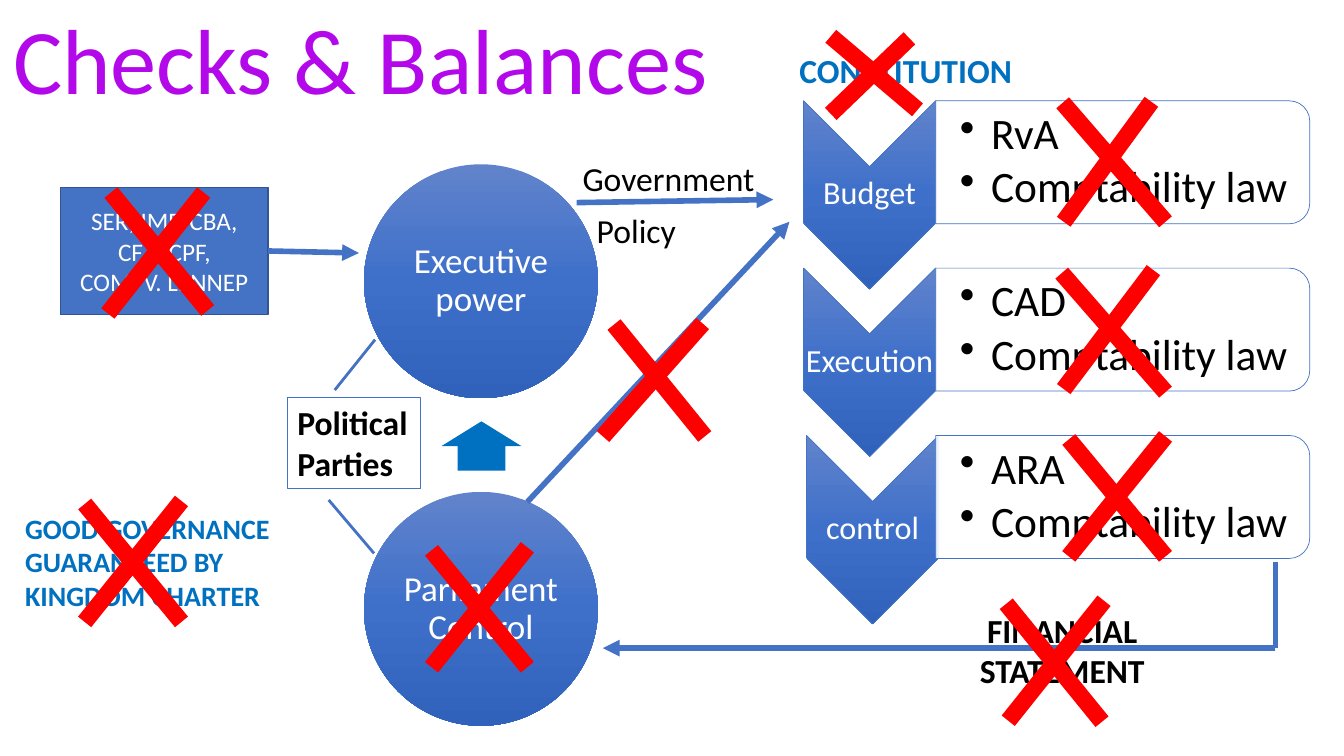
from copy import deepcopy

from pptx import Presentation
from pptx.dml.color import RGBColor
from pptx.enum.shapes import MSO_CONNECTOR, MSO_SHAPE
from pptx.enum.text import MSO_ANCHOR, PP_ALIGN
from pptx.oxml.ns import qn
from pptx.oxml.xmlchemy import OxmlElement
from pptx.util import Inches, Pt

STRAIGHT = MSO_CONNECTOR.STRAIGHT
OVAL, RECTANGLE, UP_ARROW = MSO_SHAPE.OVAL, MSO_SHAPE.RECTANGLE, MSO_SHAPE.UP_ARROW
CHEVRON, ROUND_PANEL = MSO_SHAPE.CHEVRON, MSO_SHAPE.ROUND_2_SAME_RECTANGLE
TOP, MIDDLE = MSO_ANCHOR.TOP, MSO_ANCHOR.MIDDLE
LEFT, CENTER = PP_ALIGN.LEFT, PP_ALIGN.CENTER

BLACK = RGBColor(0, 0, 0)
WHITE = RGBColor(255, 255, 255)
RED = RGBColor(255, 0, 0)
PURPLE = RGBColor(0xB3, 0x08, 0xEA)
BLUE = RGBColor(0x44, 0x72, 0xC4)
DARK_BLUE = RGBColor(0x32, 0x54, 0x91)
BRIGHT_BLUE = RGBColor(0x00, 0x70, 0xC0)
GRADIENT = [(0, RGBColor(0x61, 0x83, 0xCB)), (0.5, RGBColor(0x3E, 0x70, 0xCA)),
            (1, RGBColor(0x30, 0x62, 0xBB))]
FONT = "Calibri"

TITLE = "Checks & Balances"
STAGES = [("Budget", 7.97, ["RvA", "Comptability law"]),
          ("Execution", 7.97, ["CAD", "Comptability law"]),
          ("control", 8.0, ["ARA", "Comptability law"])]
STAGE_TOP, STAGE_STEP = 1.0, 1.66
POWERS = [("Parliament Control", 4.88), ("Executive power", 1.63)]
POWER_LEFT, POWER_SIZE, POWER_INSET = 3.61, 2.32, 0.34
ADVISERS = ["SER, IMF, CBA,", "CF, NCPF,", "COM. V. LENNEP"]
LABELS = [
    (["FINANCIAL STATEMENT"], (9.34, 6.0, 2.39, 0.91), 24, BLACK, True, CENTER),
    (["Government"], (5.68, 1.52, 2.0, 0.5), 24, BLACK, False, LEFT),
    (["Policy"], (5.82, 2.03, 2.0, 0.5), 24, BLACK, False, LEFT),
    (["CONSTITUTION"], (7.83, 0.45, 2.35, 0.5), 24, BRIGHT_BLUE, True, LEFT),
    (["GOOD GOVERNANCE", "GUARANTEED BY", "KINGDOM CHARTER"],
     (0.15, 5.02, 3.11, 1.11), 20, BRIGHT_BLUE, True, LEFT),
]
FLOWS = [
    ((5.23, 4.98, 7.83, 2.2), 4, True),
    ((12.65, 5.58, 12.65, 6.43), 4, False),
    ((12.65, 6.43, 5.98, 6.43), 4, True),
    ((5.72, 2.01, 7.67, 1.98), 4, True),
    ((3.72, 3.37, 3.32, 3.87), 2, False),
    ((3.26, 4.96, 3.71, 5.49), 2, False),
]
CROSSES = [
    ((8.24, 0.36, 9.1, 1.09), (9.02, 0.38, 8.24, 1.13)),
    ((10.54, 1.02, 11.56, 2.2), (10.55, 2.2, 11.42, 1.01)),
    ((10.53, 2.71, 11.56, 3.89), (10.55, 3.86, 11.44, 2.68)),
    ((10.6, 4.36, 11.56, 5.52), (10.6, 5.52, 11.56, 4.33)),
    ((1.1, 1.91, 2.06, 3.08), (1.07, 3.11, 2.02, 1.91)),
    ((4.28, 5.46, 5.23, 6.62), (4.28, 6.62, 5.23, 5.43)),
    ((0.84, 5.0, 1.8, 6.17), (0.84, 6.17, 1.8, 4.97)),
    ((10.0, 7.15, 10.95, 5.96), (9.98, 5.99, 10.93, 7.16)),
    ((5.98, 4.33, 6.97, 3.21), (6.09, 3.22, 6.99, 4.33)),
]

deck = Presentation()
deck.slide_width, deck.slide_height = Inches(13.33), Inches(7.5)
page = deck.slides.add_slide(deck.slide_layouts[5])


def write(shape, lines, size, color, bold=False, align=LEFT, anchor=TOP,
          spacing=None, margins=None, bullets=False):
    frame = shape.text_frame
    frame.word_wrap = True
    frame.vertical_anchor = anchor
    if margins:
        (frame.margin_left, frame.margin_top,
         frame.margin_right, frame.margin_bottom) = map(Inches, margins)
    for index, line in enumerate(lines):
        para = frame.add_paragraph() if index else frame.paragraphs[0]
        para.alignment = align
        if spacing:
            para.line_spacing = spacing
        if bullets:
            para.space_after = Pt(size * 0.15)
            properties = para._p.get_or_add_pPr()
            properties.set("marL", str(Inches(0.31)))
            properties.set("indent", str(-Inches(0.31)))
            mark = OxmlElement("a:buChar")
            mark.set("char", "•")
            properties.append(mark)
        span = para.add_run()
        span.text = line
        span.font.name, span.font.size = FONT, Pt(size)
        span.font.bold, span.font.color.rgb = bold, color


def add_text(area, *content, **style):
    box = page.shapes.add_textbox(*map(Inches, area))
    write(box, *content, **style)


def add_figure(kind, area, fill=None, line=None, width=0.5, turned=False):
    left, top, wide, high = area
    if turned:
        shift = (wide - high) / 2
        left, top, wide, high = left + shift, top - shift, high, wide
    shape = page.shapes.add_shape(kind, *map(Inches, (left, top, wide, high)))
    shape.shadow.inherit = False
    if turned:
        shape.rotation = 90
    if fill is GRADIENT:
        shape.fill.gradient()
        shape.fill.gradient_angle = 270
        gradient = shape._element.spPr.find(qn("a:gradFill"))
        gradient.set("rotWithShape", "0")
        stops = gradient.find(qn("a:gsLst"))
        stops.append(deepcopy(stops[0]))
        for stop, (position, color) in zip(shape.fill.gradient_stops, GRADIENT):
            stop.position, stop.color.rgb = position, color
    elif fill is not None:
        shape.fill.solid()
        shape.fill.fore_color.rgb = fill
    else:
        shape.fill.background()
    if line is not None:
        shape.line.color.rgb, shape.line.width = line, Pt(width)
    else:
        shape.line.fill.background()
    return shape


def add_line(ends, color, width, arrow=False):
    line = page.shapes.add_connector(STRAIGHT, *map(Inches, ends))
    line.line.color.rgb, line.line.width = color, Pt(width)
    if arrow:
        head = OxmlElement("a:tailEnd")
        head.set("type", "triangle")
        line.line._get_or_add_ln().append(head)
    line._element.spPr.append(OxmlElement("a:effectLst"))
    return line


title = page.shapes.title
title.left, title.top, title.width, title.height = map(Inches, (0.03, 0.09, 7.2, 1.1))
write(title, [TITLE], 66, PURPLE, anchor=MIDDLE, spacing=0.9)

for index, (stage, left, controls) in enumerate(STAGES):
    top = STAGE_TOP + index * STAGE_STEP
    add_figure(CHEVRON, (left, top, 1.31, 1.87), GRADIENT, BLUE, turned=True)
    add_text((left, top + 0.65, 1.31, 0.56), [stage], 23, WHITE, align=CENTER,
             anchor=MIDDLE, spacing=0.9, margins=(0.02,) * 4)
    panel = add_figure(ROUND_PANEL, (9.28, top, 3.71, 1.22), WHITE, BLUE, turned=True)
    alpha = OxmlElement("a:alpha")
    alpha.set("val", "90000")
    panel._element.spPr.find(qn("a:solidFill"))[0].append(alpha)
    add_text((9.28, top + 0.06, 3.65, 1.1), controls, 31, BLACK, anchor=MIDDLE,
             spacing=0.9, margins=(0.24, 0.02, 0.02, 0.02), bullets=True)

for power, top in POWERS:
    add_figure(OVAL, (POWER_LEFT, top, POWER_SIZE, POWER_SIZE), GRADIENT)
    side = POWER_SIZE - 2 * POWER_INSET
    add_text((POWER_LEFT + POWER_INSET, top + POWER_INSET, side, side), [power], 25,
             WHITE, align=CENTER, anchor=MIDDLE, spacing=0.9, margins=(0.03,) * 4)

up_arrow = add_figure(UP_ARROW, (4.38, 4.18, 0.79, 0.49), BRIGHT_BLUE)
up_arrow.adjustments[0], up_arrow.adjustments[1] = 0.6, 0.5

for ends, width, arrow in FLOWS:
    add_line(ends, BLUE, width, arrow)

for lines, area, size, color, bold, align in LABELS:
    add_text(area, lines, size, color, bold=bold, align=align)

parties = add_figure(RECTANGLE, (2.85, 3.94, 1.32, 0.91), None, BLUE, 0.75)
write(parties, ["Political Parties"], 24, BLACK, bold=True)

advisers = add_figure(RECTANGLE, (0.6, 1.86, 2.06, 1.26), BLUE, DARK_BLUE, 1)
write(advisers, ADVISERS, 18, WHITE, align=CENTER, anchor=MIDDLE)
advice = add_line((2.66, 2.49, 3.56, 2.51), BLUE, 4, True)
advice.begin_connect(advisers, 3)

for strokes in CROSSES:
    for ends in strokes:
        add_line(ends, RED, 12)

deck.save("out.pptx")
